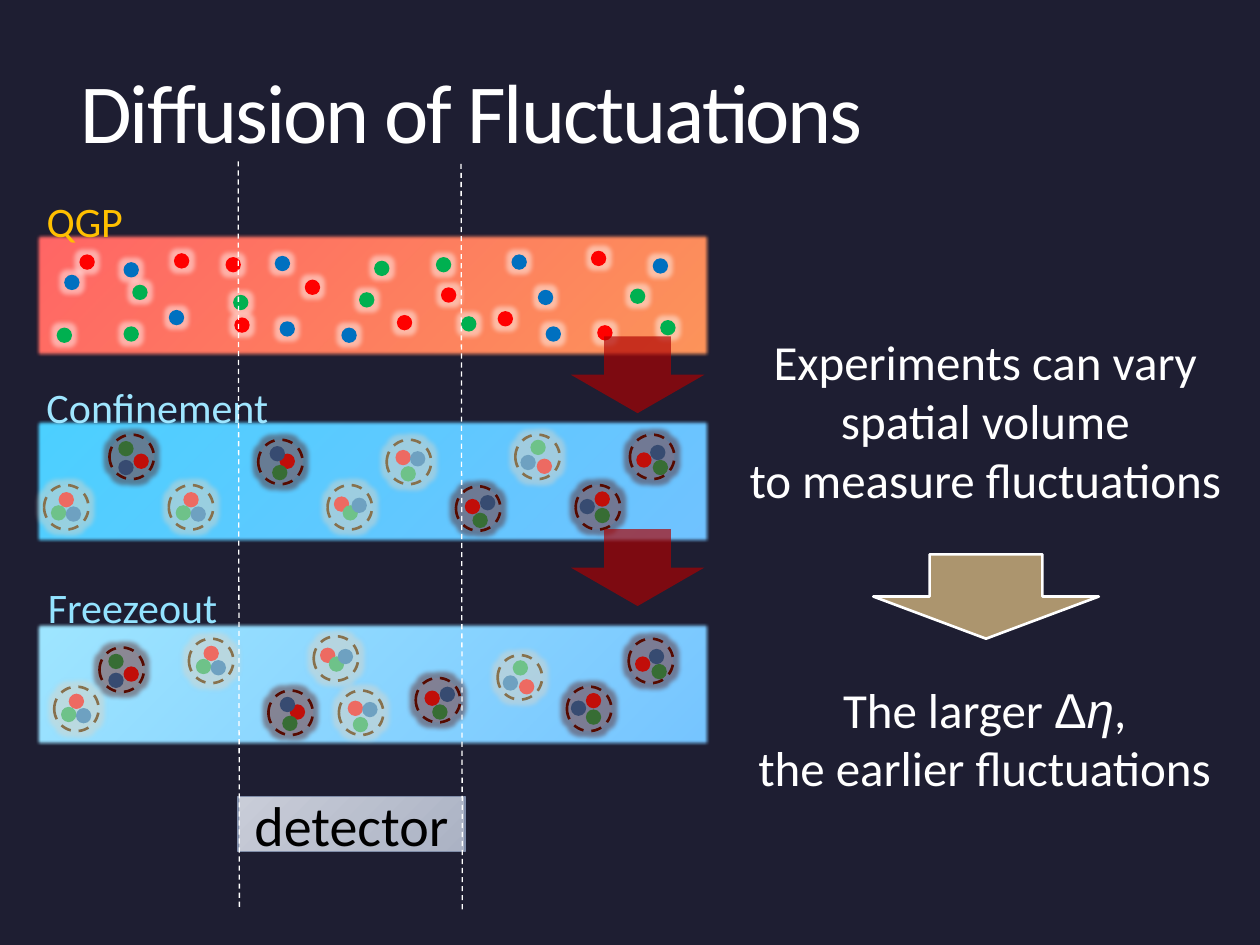
from dataclasses import dataclass
from typing import NamedTuple

from lxml import etree
from pptx import Presentation
from pptx import util as u
from pptx.dml.color import RGBColor
from pptx.enum import dml, shapes, text
from pptx.oxml.ns import qn


@dataclass(frozen=True)
class Theme:
    """Colours, type sizes and fonts of the slide."""
    ground: str = "1E1E32"
    white: str = "FFFFFF"
    black: str = "000000"
    red: str = "FF0000"
    green: str = "00B050"
    blue: str = "0070C0"
    gold: str = "FFC000"
    cyan: str = "9FE6FF"
    pale_cyan: str = "93E3FF"
    step: str = "AD0101"
    tan: str = "AC956E"
    font: str = "Calibri"
    symbol_font: str = "Arial"
    title: float = 48
    detector: float = 32
    body: float = 28
    label: float = 24


class Box(NamedTuple):
    """Left, top, width and height in points."""
    left: float
    top: float
    width: float
    height: float


class Look(NamedTuple):
    """Fill, opacity, outline and halo of a shape."""
    fill: tuple
    opacity: int = 100
    line: str = ""
    weight: float = 1
    dashed: bool = False
    halo: tuple = ()
    soft: float = 0


class Stage(NamedTuple):
    """One coloured band with its label."""
    label: str
    label_color: str
    label_box: Box
    band: Box
    look: Look


class Span(NamedTuple):
    """A run of text with its own font."""
    words: str
    font: str = "Calibri"
    italic: bool = False


THEME = Theme()
QUARK, HADRON = 8.8, 25.4
COLORS = (THEME.red, THEME.green, THEME.blue)
FREE_LOOKS = [Look((color,), halo=(THEME.white, 45, 5)) for color in COLORS]
BOUND_LOOKS = [Look((color,)) for color in COLORS]
HADRON_LOOKS = (
    Look(("DED5C5",), 10, "87714D", 1.5, True, ("DED5C5", 45, 5)),
    Look(("FF7461",), 10, "560A00", 1.5, True, ("560A00", 40, 5)),
)
STAGES = (
    Stage("QGP", THEME.gold, Box(19.5, 108, 58.3, 36), Box(20.2, 133.2, 385.2, 70.6),
          Look(("FF6565", "FC945A"), line="C00000", soft=2.5)),
    Stage("Confinement", THEME.cyan, Box(19.5, 214.6, 141, 36), Box(20.2, 239.8, 385.2, 70.6),
          Look(("4BD0FF", "71C2FF"), line="002060", soft=2.5)),
    Stage("Freezeout", THEME.pale_cyan, Box(20.2, 329, 111.6, 36), Box(20.2, 355.7, 385.2, 70.6),
          Look(("9FE6FF", "75C4FF"), line="002060", soft=2.5)),
)
FREE_QUARKS = (
    ((284.4, 177.8), (128.9, 146.9), (252, 164.2), (133.9, 181.4), (45.4, 145.4),
     (341.3, 185.8), (337.7, 143.3), (174.2, 159.8), (226.8, 180), (99.4, 144.7)),
    ((263.5, 180.7), (360, 164.9), (75.6, 162.7), (377.3, 182.9), (205.2, 167),
     (213.8, 149), (249.1, 146.9), (32.4, 187.2), (70.6, 186.5), (133.2, 168.5)),
    ((195.1, 187.2), (96.5, 177.1), (157, 146.2), (159.8, 183.6), (292.3, 145.4),
     (70.6, 149.8), (307.4, 165.6), (311.8, 186.5), (36.7, 157), (373, 147.6)),
)
UPRIGHT = ((8.3, 4), (3.9, 11.5), (12.4, 12.2))
TRIPLETS = (
    ((12.2, 13.7), (8.6, 2.9), (2.9, 11.5)),
    ((12.2, 7.9), (7.9, 14.4), (6.5, 3.6)),
    ((3.6, 6.5), (8.6, 11.5), (13.7, 7.2)),
    ((10.8, 3.6), (10.8, 13), (2.2, 7.9)),
    ((5, 5.8), (7.9, 15.1), (13.3, 6.5)),
    ((3.6, 10.1), (13, 14.4), (11.5, 5.8)),
    UPRIGHT,
    ((5, 7.2), (9.4, 15.1), (13.7, 5)),
    UPRIGHT,
    ((13.7, 10.8), (5, 3.6), (5, 14.4)),
)
HADRON_ROWS = (
    ((294.5, 248.4), (147.6, 251.3), (187.2, 277.2), (329, 277.2), (221, 251.3),
     (360, 248.4), (25.2, 277.2), (260.6, 277.9), (96.5, 277.2), (62.6, 248.4)),
    ((284.4, 374.4), (153.4, 394.6), (179.3, 363.6), (324, 392.4), (193.7, 394.6),
     (359.3, 365), (31, 392.4), (237.6, 387.4), (108, 365), (56.9, 370)),
)


def assign(target, values: dict) -> None:
    """Set every named attribute on the target."""
    for name, value in values.items():
        setattr(target, name, value)


def add_alpha(color, percent: int) -> None:
    """Give a colour element its opacity."""
    etree.SubElement(color, qn("a:alpha"), val=str(percent * 1000))


def draw_shape(page, kind, box: Box, look: Look):
    """Draw a preset shape with the given look."""
    shape = page.shapes.add_shape(kind, *map(u.Pt, box))
    shape.shadow.inherit = False
    properties = shape._element.spPr
    if len(look.fill) == 2:
        shape.fill.gradient()
        shape.fill.gradient_angle = 315
        for stop, color, position in zip(shape.fill.gradient_stops, look.fill, (0, 1)):
            stop.color.rgb = RGBColor.from_string(color)
            stop.position = position
    else:
        shape.fill.solid()
        shape.fill.fore_color.rgb = RGBColor.from_string(look.fill[0])
        if look.opacity < 100:
            add_alpha(properties.find(qn("a:solidFill"))[0], look.opacity)
    if look.line:
        style_line(shape.line, look.line, look.weight, look.dashed)
    else:
        shape.line.fill.background()
    effects = properties.find(qn("a:effectLst"))
    if look.halo:
        color, opacity, radius = look.halo
        glow = etree.SubElement(effects, qn("a:glow"), rad=str(u.Pt(radius)))
        add_alpha(etree.SubElement(glow, qn("a:srgbClr"), val=color), opacity)
    if look.soft:
        etree.SubElement(effects, qn("a:softEdge"), rad=str(u.Pt(look.soft)))
    return shape


def style_line(line, color: str, weight: float, dashed: bool) -> None:
    """Colour a line and set its weight and dash."""
    line.color.rgb = RGBColor.from_string(color)
    line.width = u.Pt(weight)
    if dashed:
        line.dash_style = dml.MSO_LINE.DASH


def write(frame, lines: list, size: float, color: str, align=text.PP_ALIGN.CENTER,
          **frame_values) -> None:
    """Write lines of spans into a text frame."""
    assign(frame, {"word_wrap": True, **frame_values})
    for index, spans in enumerate(lines):
        para = frame.add_paragraph() if index else frame.paragraphs[0]
        para.alignment = align
        for span in spans:
            run = para.add_run()
            run.text = span.words
            assign(run.font, {"size": u.Pt(size), "name": span.font, "italic": span.italic})
            run.font.color.rgb = RGBColor.from_string(color)


def draw_text(page, box: Box, lines: list, size: float, color: str, **values):
    """Place a text box and return its frame."""
    frame = page.shapes.add_textbox(*map(u.Pt, box)).text_frame
    write(frame, lines, size, color, **values)
    return frame


def draw_quark(page, left: float, top: float, look: Look) -> None:
    """Draw one quark."""
    draw_shape(page, shapes.MSO_SHAPE.OVAL, Box(left, top, QUARK, QUARK), look)


def draw_hadrons(page, places: tuple) -> None:
    """Draw a row of hadrons, alternately light and dark, around their quarks."""
    for (left, top), triplet in zip(places, TRIPLETS):
        for (across, down), look in zip(triplet, BOUND_LOOKS):
            draw_quark(page, left + across, top + down, look)
    for index, (left, top) in enumerate(places):
        draw_shape(page, shapes.MSO_SHAPE.OVAL, Box(left, top, HADRON, HADRON),
                   HADRON_LOOKS[index % 2])


def draw_guide(page, start: tuple, end: tuple) -> None:
    """Draw a dashed edge of the detector window."""
    guide = page.shapes.add_connector(shapes.MSO_CONNECTOR.STRAIGHT, *map(u.Pt, start + end))
    style_line(guide.line, THEME.white, 0.75, True)
    etree.SubElement(guide._element.spPr, qn("a:effectLst"))


def main() -> None:
    """Build and save the slide."""
    deck = Presentation()
    assign(deck, {"slide_width": u.Pt(720), "slide_height": u.Pt(540)})
    page = deck.slides.add_slide(deck.slide_layouts[6])
    page.background.fill.solid()
    page.background.fill.fore_color.rgb = RGBColor.from_string(THEME.ground)
    left, middle = text.PP_ALIGN.LEFT, text.MSO_ANCHOR.MIDDLE

    title = draw_text(page, Box(38.9, 1.4, 636.5, 130.3), [[Span("Diffusion of Fluctuations")]],
                      THEME.title, THEME.white, align=left, vertical_anchor=middle)
    title.paragraphs[0].line_spacing = 0.9
    title.paragraphs[0].runs[0].font._element.set("spc", "-120")
    for stage in STAGES:
        draw_shape(page, shapes.MSO_SHAPE.RECTANGLE, stage.band, stage.look)
        draw_text(page, stage.label_box, [[Span(stage.label)]], THEME.label,
                  stage.label_color, align=left, word_wrap=False)
    for places, look in zip(FREE_QUARKS, FREE_LOOKS):
        for place in places:
            draw_quark(page, *place, look)
    for places in HADRON_ROWS:
        draw_hadrons(page, places)

    detector = draw_shape(page, shapes.MSO_SHAPE.RECTANGLE, Box(136.1, 455, 129.6, 31.7),
                          Look(("C9CDD8", "ABB2C4"), line="808DA9", weight=0.75))
    write(detector.text_frame, [[Span("detector")]], THEME.detector, THEME.black,
          vertical_anchor=middle)
    draw_guide(page, (136.1, 92.2), (136.8, 519.8))
    draw_guide(page, (263.5, 93.6), (264.2, 519.8))
    for top in (192.2, 302.4):
        draw_shape(page, shapes.MSO_SHAPE.DOWN_ARROW, Box(326.2, top, 76.3, 43.9),
                   Look((THEME.step,), 67))
    draw_text(page, Box(421.2, 185.8, 283.7, 108.7),
              [[Span("Experiments can vary")], [Span("spatial volume")],
               [Span("to measure fluctuations")]], THEME.body, THEME.white, word_wrap=False)
    draw_shape(page, shapes.MSO_SHAPE.DOWN_ARROW, Box(499, 316.8, 128.9, 48.2),
               Look((THEME.tan,), line=THEME.white, weight=1.5))
    draw_text(page, Box(426.2, 384.5, 272.9, 74.9),
              [[Span("The larger "), Span("Δ", THEME.symbol_font),
                Span("η", THEME.symbol_font, True), Span(",")],
               [Span("the earlier fluctuations")]], THEME.body, THEME.white)
    deck.save("out.pptx")


if __name__ == "__main__":
    main()
